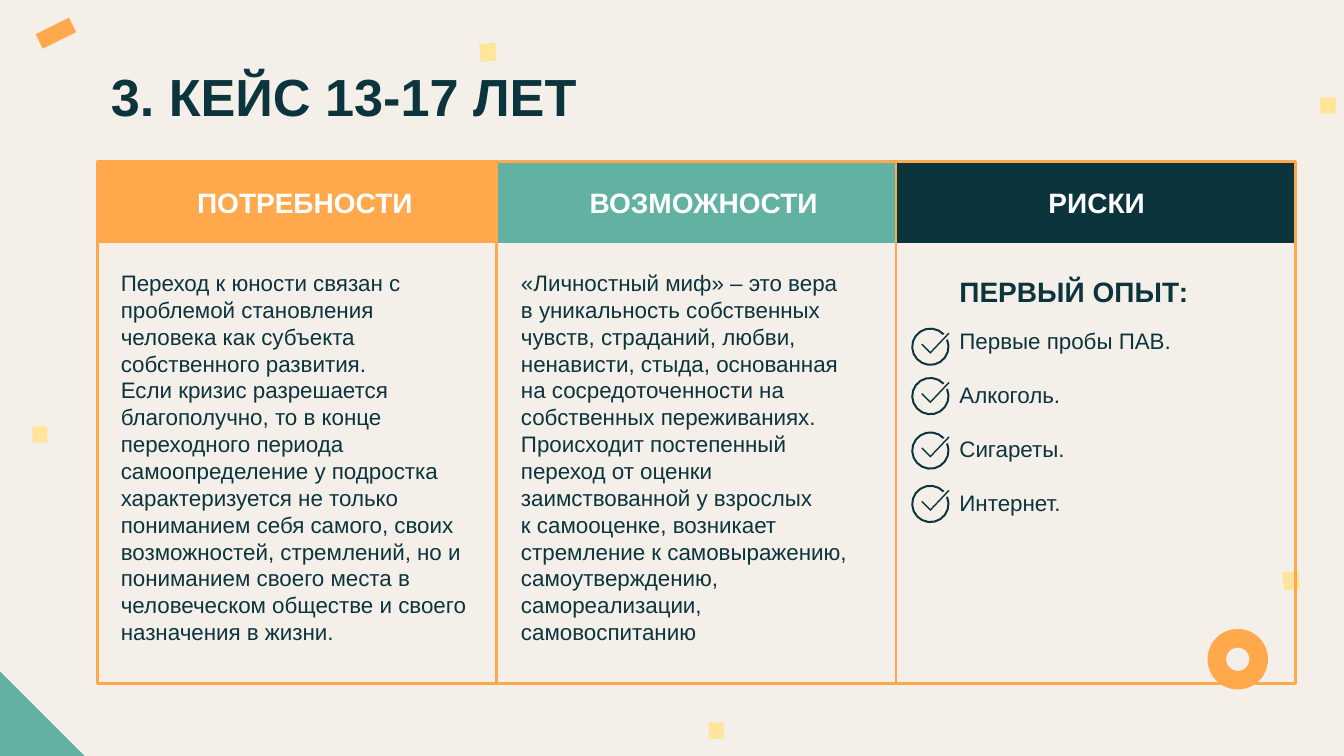
from dataclasses import dataclass
from math import cos, radians, sin

from pptx import Presentation
from pptx.dml.color import RGBColor
from pptx.enum.shapes import MSO_SHAPE as Preset
from pptx.enum.text import PP_ALIGN as Align
from pptx.util import Inches, Pt


@dataclass(frozen=True)
class Theme:
    background: str = "F4F0E9"
    orange: str = "FFA84C"
    teal: str = "62B2A3"
    navy: str = "0C343D"
    yellow: str = "FFE599"
    white: str = "FFFFFF"
    font: str = "Arial"
    title: float = 37.3
    heading: float = 20
    body: float = 16
    frame: float = 2


THEME = Theme()
COLUMN_LEFT, COLUMN_WIDTH = 0.97, 3.96
COLUMNS = [
    ("ПОТРЕБНОСТИ", THEME.orange, 3.83),
    ("ВОЗМОЖНОСТИ", THEME.teal, 3.82),
    ("РИСКИ", THEME.navy, 3.7),
]
NEEDS = [
    "Переход к юности связан с проблемой становления человека как субъекта собственного развития.",
    "Если кризис разрешается благополучно, то в конце переходного периода самоопределение "
    "у подростка характеризуется не только пониманием себя самого, своих возможностей, "
    "стремлений, но и пониманием своего места в человеческом обществе и своего назначения в жизни.",
]
OPPORTUNITIES = [
    "«Личностный миф» – это вера",
    "в уникальность собственных чувств, страданий, любви, ненависти, стыда, основанная",
    "на сосредоточенности на собственных переживаниях. Происходит постепенный переход "
    "от оценки заимствованной у взрослых",
    "к самооценке, возникает стремление к самовыражению, самоутверждению, "
    "самореализации, самовоспитанию",
]
RISKS = ["Первые пробы ПАВ.", "Алкоголь.", "Сигареты.", "Интернет."]
CHECK_TOPS = [3.25, 3.74, 4.28, 4.81]
CONFETTI = [
    (0.32, 4.23, 0.15, 0), (13.1, 0.97, 0.15, 0), (7.03, 7.17, 0.15, 0),
    (4.75, 0.44, 0.18, 84.9), (12.72, 5.68, 0.18, 84.9),
]


def paint(shape, fill=None, line=None):
    """Set the fill and outline of a shape and remove its shadow."""
    shape.shadow.inherit = False
    if fill:
        shape.fill.solid()
        shape.fill.fore_color.rgb = RGBColor.from_string(fill)
    else:
        shape.fill.background()
    if line:
        shape.line.color.rgb = RGBColor.from_string(line)
        shape.line.width = Pt(THEME.frame)
    else:
        shape.line.fill.background()


def add_block(slide, preset, box, fill=None, line=None, rotation=0):
    """Add a preset shape placed by a box in inches."""
    shape = slide.shapes.add_shape(preset, *map(Inches, box))
    shape.rotation = rotation
    paint(shape, fill, line)
    return shape


def add_text(slide, box, lines, size, color=THEME.navy, bold=False, wrap=True,
             margin=None, **paragraph_format):
    """Add a text box with one paragraph for each line."""
    frame = slide.shapes.add_textbox(*map(Inches, box)).text_frame
    frame.word_wrap = wrap
    if margin:
        for side in ("left", "top", "right", "bottom"):
            setattr(frame, f"margin_{side}", Inches(margin))
    for index, line in enumerate(lines):
        paragraph = frame.add_paragraph() if index else frame.paragraphs[0]
        for name, value in paragraph_format.items():
            setattr(paragraph, name, value)
        run = paragraph.add_run()
        run.text = line
        for name, value in {"name": THEME.font, "size": Pt(size), "bold": bold}.items():
            setattr(run.font, name, value)
        run.font.color.rgb = RGBColor.from_string(color)


def add_check(slide, left, top):
    """Add an open ring with a tick inside it."""
    center, outer, inner = 0.19, 0.19, 0.17
    angles = [radians(angle) for angle in range(-23, 318, 20)]
    arcs = [(outer, angles), (inner, angles[::-1])]
    ring = [(center + radius * cos(angle), center + radius * sin(angle))
            for radius, sweep in arcs for angle in sweep]
    tick = [(0.1, 0.17), (0.11, 0.16), (0.19, 0.24), (0.37, 0.05), (0.38, 0.06), (0.19, 0.26)]
    outlines = [[(Inches(left + x), Inches(top + y)) for x, y in points]
                for points in (ring, tick)]
    builder = slide.shapes.build_freeform(*outlines[0][0])
    builder.add_line_segments(outlines[0][1:])
    builder.move_to(*outlines[1][0])
    builder.add_line_segments(outlines[1][1:])
    paint(builder.convert_to_shape(), THEME.navy)


def add_decor(slide):
    """Add the decorative shapes around the columns."""
    add_block(slide, Preset.RECTANGLE, (0.37, 0.25, 0.37, 0.16), THEME.orange, rotation=333.7)
    add_block(slide, Preset.RECTANGLE, (-0.17, 6.69, 0.9, 1.77), THEME.teal, rotation=315)
    donut = add_block(slide, Preset.DONUT, (11.98, 6.24, 0.6, 0.6), THEME.orange)
    donut.adjustments[0] = 0.307
    for left, top, width, rotation in CONFETTI:
        add_block(slide, Preset.RECTANGLE, (left, top, width, 0.16), THEME.yellow, rotation=rotation)


def add_columns(slide):
    """Add the three framed columns with their headings."""
    for index, (label, color, label_width) in enumerate(COLUMNS):
        left = COLUMN_LEFT + index * COLUMN_WIDTH
        add_block(slide, Preset.RECTANGLE, (left, 1.59, COLUMN_WIDTH, 0.82), color)
        add_text(slide, (left + 0.14, 1.79, label_width, 0.44), [label], THEME.heading,
                 THEME.white, bold=True, alignment=Align.CENTER)
    for index in range(len(COLUMNS)):
        left = COLUMN_LEFT + index * COLUMN_WIDTH
        add_block(slide, Preset.RECTANGLE, (left, 1.6, COLUMN_WIDTH, 5.18), line=THEME.orange)


def main():
    """Build the slide and save it."""
    presentation = Presentation()
    presentation.slide_width, presentation.slide_height = Inches(40 / 3), Inches(7.5)
    slide = presentation.slides.add_slide(presentation.slide_layouts[6])
    slide.background.fill.solid()
    slide.background.fill.fore_color.rgb = RGBColor.from_string(THEME.background)

    add_decor(slide)
    add_columns(slide)
    add_text(slide, (0.97, 0.51, 9.9, 0.84), ["3. КЕЙС 13-17 ЛЕТ"], THEME.title,
             bold=True, margin=0.13)
    for left, lines in ((1.1, NEEDS), (5.07, OPPORTUNITIES)):
        add_text(slide, (left, 2.62, 3.69, 3.87), lines, THEME.body)
    add_text(slide, (9.42, 2.67, 2.57, 0.44), ["ПЕРВЫЙ ОПЫТ:"], THEME.heading,
             bold=True, wrap=False)
    add_text(slide, (9.42, 3.2, 3.17, 1.99), RISKS, THEME.body, space_after=Pt(19.2))
    for top in CHECK_TOPS:
        add_check(slide, 9.04, top)
    presentation.save("out.pptx")


if __name__ == "__main__":
    main()
